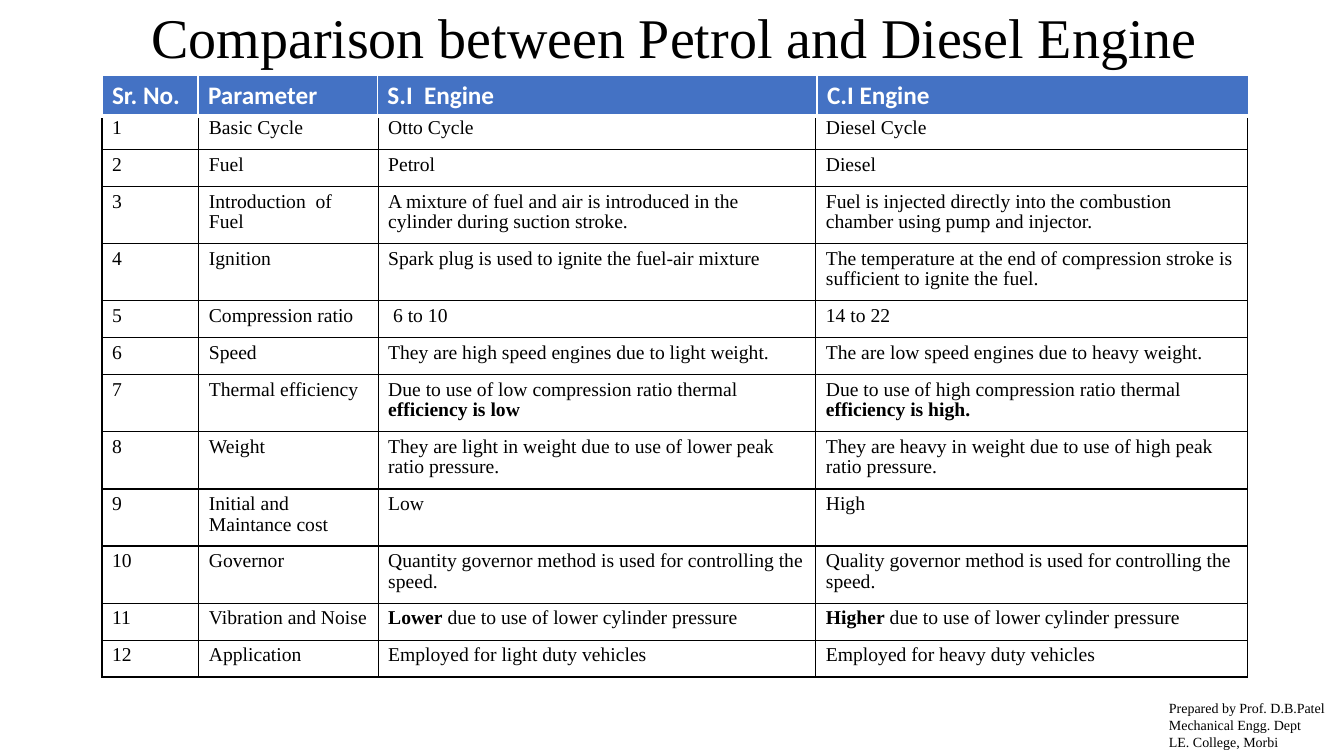
import pptx
import pptx.dml.color
import pptx.enum.text
import pptx.oxml
import pptx.oxml.ns
import pptx.util
from pptx.util import Cm, Pt

BLACK = pptx.dml.color.RGBColor(0x00, 0x00, 0x00)
WHITE = pptx.dml.color.RGBColor(0xFF, 0xFF, 0xFF)
BLUE = pptx.dml.color.RGBColor(0x44, 0x72, 0xC4)

TABLE_LEFT = 2.57
HEADER_TOP, HEADER_HEIGHT = 1.9, 1.03
BODY_TOP, ONE_LINE, TWO_LINES = 2.84, 0.93, 1.44
HEADER_COLUMNS = (2.42, 4.52, 11.08, 10.87)
BODY_COLUMNS = (2.44, 4.52, 11.03, 10.87)

HEADINGS = ("Sr. No.", "Parameter", "S.I  Engine", "C.I Engine")
# Row height, parameter, petrol, diesel; ** encloses bold words
COMPARISON = (
    (ONE_LINE, "Basic Cycle", "Otto Cycle", "Diesel Cycle"),
    (ONE_LINE, "Fuel", "Petrol", "Diesel"),
    (TWO_LINES, "Introduction  of Fuel",
     "A mixture of fuel and air is introduced in the cylinder during suction stroke.",
     "Fuel is injected directly into the combustion chamber using pump and injector."),
    (TWO_LINES, "Ignition",
     "Spark plug is used to ignite the fuel-air mixture",
     "The temperature at the end of compression stroke is sufficient to ignite the fuel."),
    (ONE_LINE, "Compression ratio", " 6 to 10", "14 to 22"),
    (ONE_LINE, "Speed",
     "They are high speed engines due to light weight.",
     "The are low speed engines due to heavy weight."),
    (TWO_LINES, "Thermal efficiency",
     "Due to use of low compression ratio thermal **efficiency is low**",
     "Due to use of high compression ratio thermal **efficiency is high.**"),
    (TWO_LINES, "Weight",
     "They are light in weight due to use of lower peak ratio pressure.",
     "They are heavy in weight due to use of high peak ratio pressure."),
    (TWO_LINES, "Initial and Maintance cost", "Low", "High"),
    (TWO_LINES, "Governor",
     "Quantity governor method is used for controlling the speed.",
     "Quality governor method is used for controlling the speed."),
    (ONE_LINE, "Vibration and Noise",
     "**Lower** due to use of lower cylinder pressure",
     "**Higher** due to use of lower cylinder pressure"),
    (ONE_LINE, "Application",
     "Employed for light duty vehicles",
     "Employed for heavy duty vehicles"),
)


class Page:
    """Holds the slide and its text style."""

    serif = "Times New Roman"
    sans = "Calibri"

    def __init__(self, deck):
        self.slide = deck.slides.add_slide(deck.slide_layouts[6])

    def fill_para(self, para, text, size, font=serif, color=BLACK, bold=None):
        """Fill a paragraph; words between ** become bold."""
        para.font.size = Pt(size)
        para.font.name = font
        para.font.color.rgb = color
        para.font.bold = bold
        for index, part in enumerate(text.split("**")):
            if part:
                span = para.add_run()
                span.text = part
                if index % 2:
                    span.font.bold = True

    def text(self, left, top, width, height, lines, size, align=None):
        box = self.slide.shapes.add_textbox(Cm(left), Cm(top), Cm(width), Cm(height))
        frame = box.text_frame
        frame.word_wrap = True
        for index, line in enumerate(lines):
            para = frame.add_paragraph() if index else frame.paragraphs[0]
            para.alignment = align
            self.fill_para(para, line, size)

    def border(self, cell, color, bottom):
        """Draw 1 pt cell borders, with the given width at the bottom."""
        for side, width in (("L", 1), ("R", 1), ("T", 1), ("B", bottom)):
            cell._tc.get_or_add_tcPr().append(pptx.oxml.parse_xml(
                f'<a:ln{side} {pptx.oxml.ns.nsdecls("a")} w="{Pt(width)}">'
                f'<a:solidFill><a:srgbClr val="{color}"/></a:solidFill></a:ln{side}>'))

    def row_table(self, top, height, columns, texts, header=False):
        """Add a table of one row."""
        table = self.slide.shapes.add_table(
            1, len(columns), Cm(TABLE_LEFT), Cm(top), Cm(sum(columns)), Cm(height)).table
        table.first_row = header
        table.horz_banding = False
        for column, width, cell, text in zip(table.columns, columns, table.rows[0].cells, texts):
            column.width = Cm(width)
            para = cell.text_frame.paragraphs[0]
            if header:
                self.border(cell, WHITE, 3)
                cell.fill.solid()
                cell.fill.fore_color.rgb = BLUE
                self.fill_para(para, text, 18, self.sans, WHITE, True)
            else:
                self.border(cell, BLACK, 1)
                cell.fill.background()
                para.line_spacing = 0.95
                self.fill_para(para, text, 14)


def main():
    deck = pptx.Presentation()
    deck.slide_width, deck.slide_height = Cm(33.87), Cm(19.05)
    page = Page(deck)
    page.text(2.84, -0.05, 28.3, 1.96, ["Comparison between Petrol and Diesel Engine"],
              40, pptx.enum.text.PP_ALIGN.CENTER)

    top = BODY_TOP
    for number, (height, *texts) in enumerate(COMPARISON, 1):
        page.row_table(top, height, BODY_COLUMNS, (str(number), *texts))
        top += height
        if number == 1:  # the header overlaps the top of the first row
            page.row_table(HEADER_TOP, HEADER_HEIGHT, HEADER_COLUMNS, HEADINGS, header=True)

    page.text(29.21, 17.5, 4.65, 1.55,
              ["Prepared by Prof. D.B.Patel", "Mechanical Engg. Dept", "LE. College, Morbi"], 10)
    deck.save("out.pptx")


if __name__ == "__main__":
    main()
